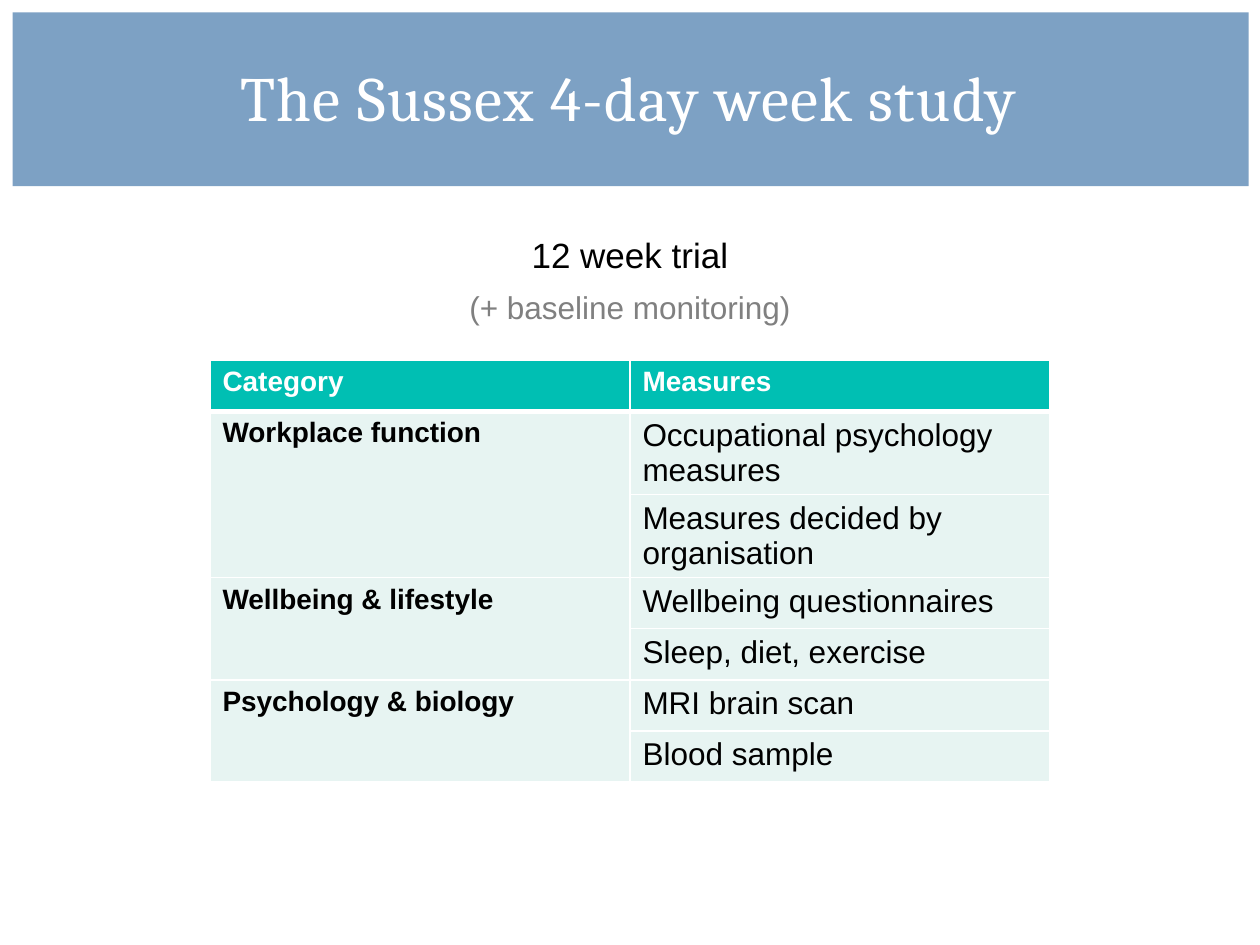
from dataclasses import dataclass

from pptx import Presentation, util as u
from pptx.dml.color import RGBColor
from pptx.enum import shapes, text
from pptx.oxml import parse_xml
from pptx.oxml.ns import nsdecls

WIDE, HIGH = u.Inches(10), u.Inches(7.5)
ROWS = [
    ("Category", "Measures"),
    ("Workplace function", "Occupational psychology measures"),
    ("", "Measures decided by organisation"),
    ("Wellbeing & lifestyle", "Wellbeing questionnaires"),
    ("", "Sleep, diet, exercise"),
    ("Psychology & biology", "MRI brain scan"),
    ("", "Blood sample"),
]


@dataclass(frozen=True)
class Theme:
    band: str = "7DA1C4"
    head: str = "00BFB3"
    cell: str = "E7F4F2"
    ink: str = "000000"
    note: str = "808080"
    white: str = "FFFFFF"
    serif: str = "Cambria"
    sans: str = "Arial"
    title: int = 36
    lead: int = 20
    main: int = 18
    label: int = 16


THEME = Theme()


def style(para, face, size, color, bold=False):
    font = para.font
    font.name, font.size, font.bold = face, u.Pt(size), bold
    font.color.rgb = RGBColor.from_string(color)


def share(left, top, wide, high):
    """Turn shares of the slide's size into lengths."""
    return [round(part * side)
            for part, side in zip((left, top, wide, high), (WIDE, HIGH) * 2)]


def place(shape, *box):
    shape.left, shape.top, shape.width, shape.height = share(*box)


def add_band(slide):
    band = slide.shapes.add_shape(shapes.MSO_SHAPE.RECTANGLE,
                                  *share(0.01, 0.013, 0.981, 0.184))
    band.shadow.inherit = False
    band.fill.solid()
    band.fill.fore_color.rgb = RGBColor.from_string(THEME.band)
    band.line.fill.background()
    # Behind the placeholders
    band.element.getparent().insert(2, band.element)


def set_title(slide, words):
    title = slide.shapes.title
    place(title, 0.064, 0.049, 0.87, 0.117)
    frame = title.text_frame
    frame.text = words
    frame.auto_size = text.MSO_AUTO_SIZE.NONE
    frame.vertical_anchor = text.MSO_ANCHOR.MIDDLE
    para = frame.paragraphs[0]
    para.alignment = text.PP_ALIGN.CENTER
    para.line_spacing = 0.9
    style(para, THEME.serif, THEME.title, THEME.white)
    para.runs[0].font._element.set("spc", "80")


def set_body(slide, lines):
    body = slide.placeholders[1]
    place(body, 0.045, 0.24, 0.91, 0.545)
    frame = body.text_frame
    frame.text = "\n".join(words for words, _, _ in lines)
    frame.auto_size = text.MSO_AUTO_SIZE.NONE
    for row, (para, (_, size, color)) in enumerate(zip(frame.paragraphs, lines)):
        # No bullet and no hanging indent
        props = para._p.get_or_add_pPr()
        props.set("marL", "0")
        props.set("indent", "0")
        props.append(parse_xml(f"<a:buNone {nsdecls('a')}/>"))
        para.alignment = text.PP_ALIGN.CENTER
        para.space_before = u.Pt(7.5 if row else 0)
        style(para, THEME.sans, size, color)


def edge(cell, top, base):
    """Draw white borders, with their own widths above and below."""
    props = cell._tc.get_or_add_tcPr()
    for side, width in zip("LRTB", (1, 1, top, base)):
        props.append(parse_xml(
            f'<a:ln{side} {nsdecls("a")} w="{u.Pt(width)}"><a:solidFill>'
            f'<a:srgbClr val="{THEME.white}"/></a:solidFill></a:ln{side}>'))


def add_grid(slide, rows):
    box = share(1 / 6, 0.381, 2 / 3, 0.379)
    grid = slide.shapes.add_table(len(rows), 2, *box).table
    for row, pair in enumerate(rows):
        for col, words in enumerate(pair):
            cell = grid.cell(row, col)
            head = row == 0
            bold = head or col == 0
            edge(cell, 3 if row == 1 else 1, 3 if head else 1)
            cell.fill.solid()
            cell.fill.fore_color.rgb = RGBColor.from_string(
                THEME.head if head else THEME.cell)
            cell.text = words
            style(cell.text_frame.paragraphs[0], THEME.sans,
                  THEME.label if bold else THEME.main,
                  THEME.white if head else THEME.ink, bold)
    # Each category spans two measures
    for row in range(1, len(rows), 2):
        grid.cell(row, 0).merge(grid.cell(row + 1, 0))


def main():
    deck = Presentation()
    deck.slide_width, deck.slide_height = WIDE, HIGH
    slide = deck.slides.add_slide(deck.slide_layouts[1])
    add_band(slide)
    set_body(slide, [("12 week trial", THEME.lead, THEME.ink),
                     ("(+ baseline monitoring)", THEME.main, THEME.note)])
    set_title(slide, "The Sussex 4-day week study")
    add_grid(slide, ROWS)
    deck.save("out.pptx")


if __name__ == "__main__":
    main()
